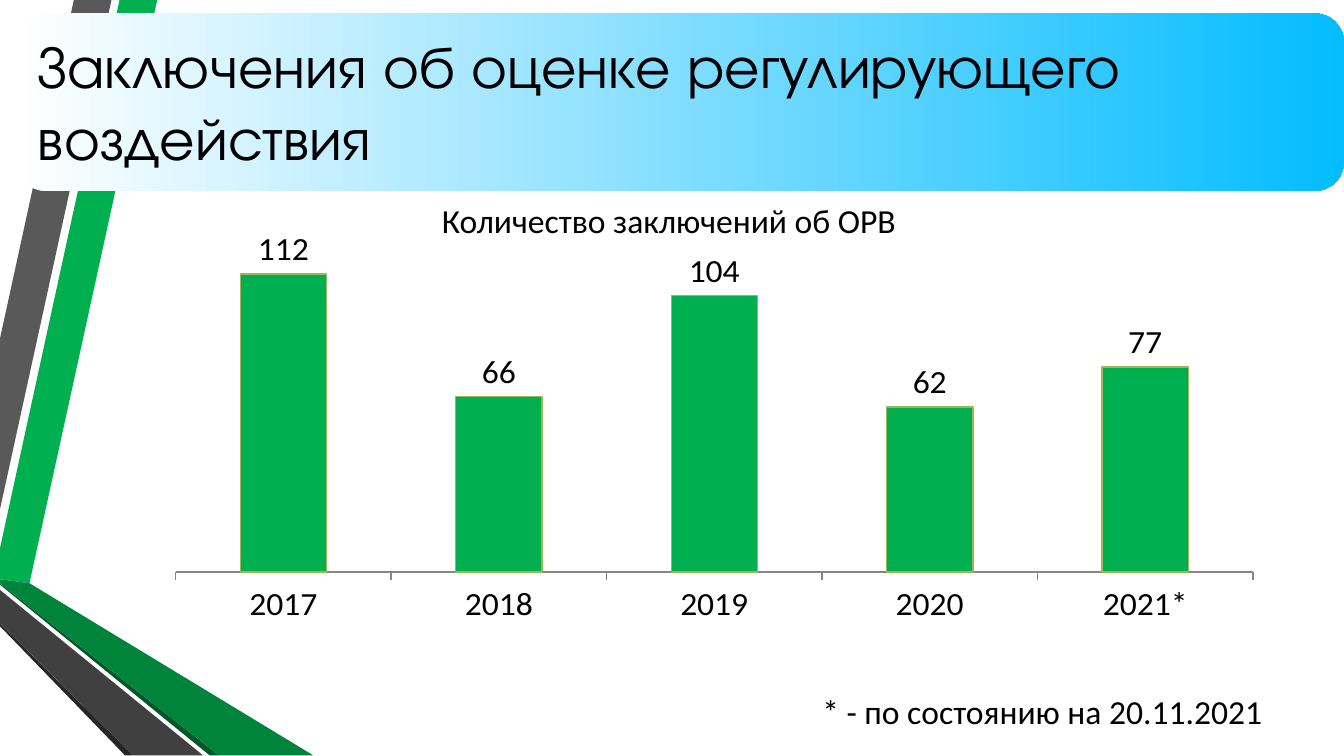
from pptx import Presentation
from pptx.chart.data import CategoryChartData
from pptx.dml.color import RGBColor
from pptx.enum.chart import XL_CHART_TYPE, XL_LABEL_POSITION, XL_TICK_MARK
from pptx.enum.shapes import MSO_SHAPE
from pptx.enum.text import MSO_ANCHOR, PP_ALIGN
from pptx.util import Inches, Pt

COLUMNS = XL_CHART_TYPE.COLUMN_CLUSTERED
OUTSIDE_END = XL_LABEL_POSITION.OUTSIDE_END
TICK_OUT, TICK_NONE = XL_TICK_MARK.OUTSIDE, XL_TICK_MARK.NONE
ROUNDED = MSO_SHAPE.ROUNDED_RECTANGLE
TOP, LEFT = MSO_ANCHOR.TOP, PP_ALIGN.LEFT

BODY_FONT, TITLE_FONT = "Calibri", "TeX Gyre Adventor"
BLACK, GREEN = "000000", "00B050"

RIBBONS = [
    (GREEN, [(0, 4.08), (0, 4.31), (0.22, 4.34), (1.17, 0), (0.89, 0)]),
    ("595959", [(0.83, 0), (0.55, 0), (0, 2.52), (0, 3.79)]),
    ("262626", [(0, 4.64), (0, 4.66), (0.93, 5.62), (0.99, 5.62)]),
    ("005828", [(0, 4.34), (0, 4.35), (1.56, 5.62), (1.63, 5.62)]),
    ("00843C", [(0, 4.34), (1.63, 5.62), (2.33, 5.62), (0.22, 4.34), (0, 4.31)]),
    ("404040", [(0, 4.64), (0.99, 5.62), (1.51, 5.62), (0, 4.39)]),
]
CONCLUSIONS = {"2017": 112, "2018": 66, "2019": 104, "2020": 62, "2021*": 77}


def rgb(color):
    return RGBColor.from_string(color)


def box(x, y, w, h):
    return Inches(x), Inches(y), Inches(w), Inches(h)


def style_font(font, name, size):
    font.name = name
    font.size = Pt(size)
    font.color.rgb = rgb(BLACK)


def write_text(sp, text, name, size):
    tf = sp.text_frame
    tf.word_wrap = True
    tf.text = text
    p = tf.paragraphs[0]
    p.alignment = LEFT
    style_font(p.runs[0].font, name, size)


def add_ribbon(s, color, points):
    corners = [(Inches(x), Inches(y)) for x, y in points]
    builder = s.shapes.build_freeform(*corners[0])
    builder.add_line_segments(corners[1:], close=True)
    sp = builder.convert_to_shape()
    sp.shadow.inherit = False
    sp.fill.solid()
    sp.fill.fore_color.rgb = rgb(color)
    sp.line.fill.background()


def add_banner(s, text):
    sp = s.shapes.add_shape(ROUNDED, *box(0.12, 0.1, 9.88, 1.32))
    sp.shadow.inherit = False
    sp.line.fill.background()
    sp.fill.gradient()
    sp.fill.gradient_angle = 0
    for stop, color in zip(sp.fill.gradient_stops, ("FFFFFF", "04BCFF")):
        stop.color.rgb = rgb(color)
    sp.text_frame.vertical_anchor = TOP
    write_text(sp, text, TITLE_FONT, 32)


def add_label(s, text, x, y, w):
    sp = s.shapes.add_textbox(*box(x, y, w, 0.4))
    write_text(sp, text, BODY_FONT, 18)


def add_column_chart(s, values):
    data = CategoryChartData()
    data.categories = list(values)
    data.add_series("Series 1", list(values.values()))
    chart = s.shapes.add_chart(COLUMNS, *box(1.14, 1.71, 8.35, 2.99), data).chart
    chart.has_legend = False
    chart.has_title = False
    style_font(chart.font, BODY_FONT, 18)

    axis = chart.category_axis
    axis.major_tick_mark = TICK_OUT
    axis.minor_tick_mark = TICK_NONE
    axis.format.line.color.rgb = rgb("868686")
    scale = chart.value_axis
    scale.visible = False
    scale.has_major_gridlines = False
    scale.minimum_scale, scale.maximum_scale = 0, 120

    plot = chart.plots[0]
    plot.gap_width = 150
    plot.vary_by_categories = False
    series = plot.series[0]
    labels = series.data_labels
    labels.show_value = True
    labels.position = OUTSIDE_END
    style_font(labels.font, BODY_FONT, 18)
    columns = series.format
    columns.fill.solid()
    columns.fill.fore_color.rgb = rgb(GREEN)
    columns.line.color.rgb = rgb("98B955")
    columns.line.width = Pt(0.75)


def main():
    prs = Presentation()
    prs.slide_width = Inches(10)
    prs.slide_height = prs.slide_width * 9 // 16
    s = prs.slides.add_slide(prs.slide_layouts[6])
    for color, points in RIBBONS:
        add_ribbon(s, color, points)
    add_column_chart(s, CONCLUSIONS)
    add_banner(s, "Заключения об оценке регулирующего воздействия")
    add_label(s, "Количество заключений об ОРВ", 3.19, 1.44, 4.88)
    add_label(s, "* - по состоянию на 20.11.2021", 6.02, 5.09, 3.62)
    prs.save("out.pptx")


if __name__ == "__main__":
    main()
